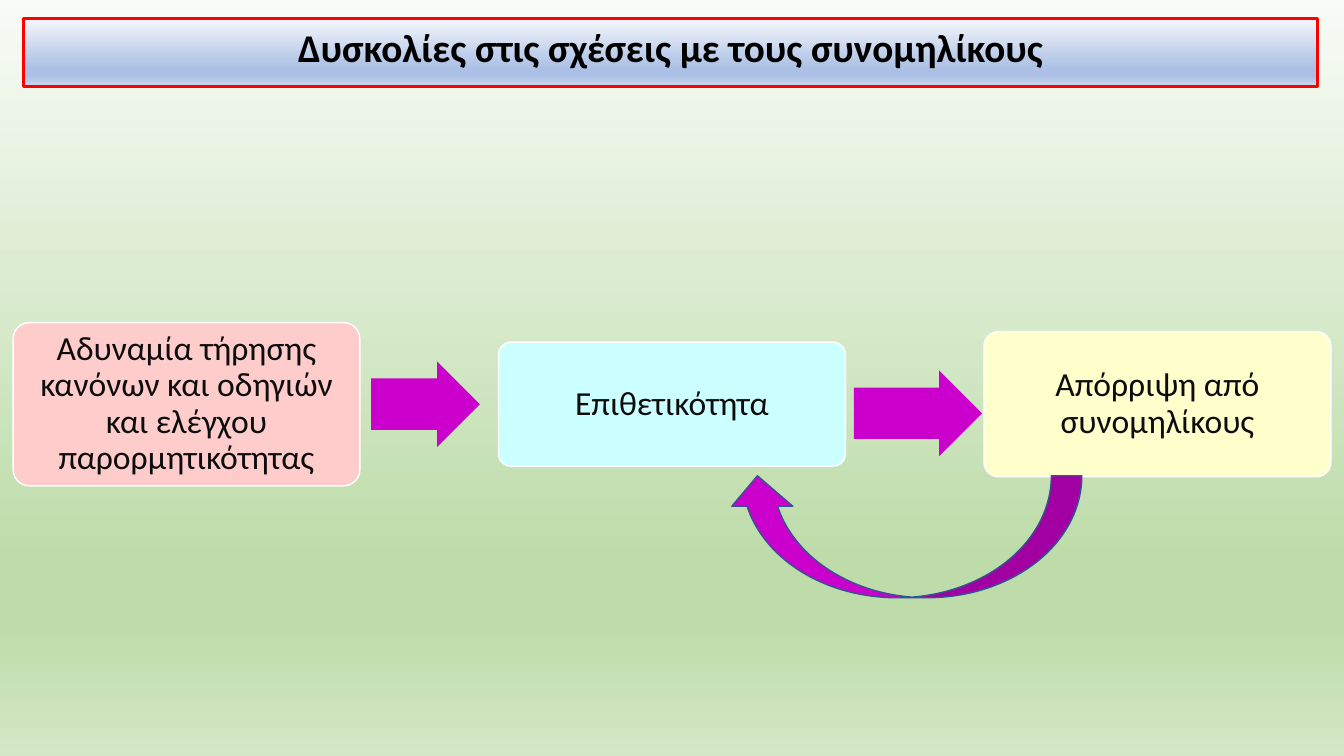
from dataclasses import dataclass

from lxml.etree import SubElement
from pptx import Presentation
from pptx.dml.color import RGBColor
from pptx.enum.shapes import MSO_SHAPE
from pptx.enum.text import MSO_ANCHOR, MSO_AUTO_SIZE, PP_ALIGN
from pptx.oxml.ns import qn
from pptx.util import Inches, Pt


@dataclass(frozen=True)
class Theme:
    """Colours, type sizes and font of the slide."""
    font: str = "Calibri"
    title_size: int = 28
    step_size: int = 24
    title_ink: str = "000000"
    step_ink: str = "0D0D0D"
    title_border: str = "FF0000"
    step_border: str = "FFFFFF"
    arrow: str = "CC00CC"
    return_border: str = "325491"
    backdrop: tuple = ("F8FBF6", "BEDCAA", "BEDCAA", "D4E8C6")
    banner: tuple = ("F6F8FC", "ABC0E4", "ABC0E4", "C7D5ED")
    stops: tuple = (0, 74, 83, 100)


THEME = Theme()
WIDTH, HEIGHT = 13.33, 7.5
STEP_LEFT, STEP_PITCH, STEP_WIDTH = 0.13, 4.815, 3.44
FLOW_AXIS = 4.01
ARROW_HEIGHT = 0.85
STEPS = (
    ("Αδυναμία τήρησης κανόνων και οδηγιών και ελέγχου παρορμητικότητας", 1.62, "FFCCCC"),
    ("Επιθετικότητα", 1.23, "CCFFFF"),
    ("Απόρριψη από συνομηλίκους", 1.44, "FFFFCC"),
)
ARROWS = ((3.68, 1.08, FLOW_AXIS), (8.47, 1.27, FLOW_AXIS + 0.09))


def paint_gradient(fill, owner, colours):
    """Fill downwards with the theme's stops in the given colours."""
    fill.gradient()
    fill.gradient_angle = 270
    stop_list = owner.xpath(".//a:gsLst")[0]
    for stop in list(stop_list):
        stop_list.remove(stop)
    for percent, colour in zip(THEME.stops, colours):
        stop = SubElement(stop_list, qn("a:gs"), pos=str(percent * 1000))
        SubElement(stop, qn("a:srgbClr"), val=colour)


def outline(shape, colour, points):
    """Draw a solid outline."""
    shape.line.color.rgb = RGBColor.from_string(colour)
    shape.line.width = Pt(points)


def write(shape, text, size, ink, anchor, bold=False):
    """Set one centred paragraph and return it."""
    frame = shape.text_frame
    frame.text = text
    frame.word_wrap = True
    frame.auto_size = MSO_AUTO_SIZE.NONE
    frame.vertical_anchor = anchor
    paragraph = frame.paragraphs[0]
    paragraph.alignment = PP_ALIGN.CENTER
    font = paragraph.font
    font.name, font.size, font.bold = THEME.font, Pt(size), bold
    font.color.rgb = RGBColor.from_string(ink)
    return paragraph


def add_block(slide, kind, left, top, width, height, colour):
    """Add a flat filled shape without an outline."""
    block = slide.shapes.add_shape(kind, *map(Inches, (left, top, width, height)))
    block.shadow.inherit = False
    block.fill.solid()
    block.fill.fore_color.rgb = RGBColor.from_string(colour)
    block.line.fill.background()
    return block


def add_banner(slide, text):
    """Turn the title placeholder into the framed banner."""
    banner = slide.shapes.title
    banner.left, banner.top = Inches(0.23), Inches(0.18)
    banner.width, banner.height = Inches(12.84), Inches(0.68)
    paint_gradient(banner.fill, banner.element, THEME.banner)
    outline(banner, THEME.title_border, 2)
    write(banner, text, THEME.title_size, THEME.title_ink, MSO_ANCHOR.TOP, bold=True)


def add_step(slide, column, text, height, colour):
    """Add a rounded step centred on the flow axis."""
    left = STEP_LEFT + column * STEP_PITCH
    step = add_block(slide, MSO_SHAPE.ROUNDED_RECTANGLE, left,
                     FLOW_AXIS - height / 2, STEP_WIDTH, height, colour)
    step.adjustments[0] = 0.1
    outline(step, THEME.step_border, 1)
    paragraph = write(step, text, THEME.step_size, THEME.step_ink, MSO_ANCHOR.MIDDLE)
    paragraph.line_spacing = 0.9
    frame = step.text_frame
    frame.margin_left = frame.margin_right = Inches(0.14)
    frame.margin_top = frame.margin_bottom = Inches(0.14)


def add_arrow(slide, left, width, axis):
    """Add a block arrow between two steps."""
    arrow = add_block(slide, MSO_SHAPE.RIGHT_ARROW, left, axis - ARROW_HEIGHT / 2,
                      width, ARROW_HEIGHT, THEME.arrow)
    arrow.adjustments[0] = 0.6
    arrow.adjustments[1] = 0.5


def add_return_arrow(slide):
    """Add the curved arrow leading back from the last step to the middle one."""
    curve = add_block(slide, MSO_SHAPE.CURVED_UP_ARROW, 7.21, 4.72, 3.52, 1.21, THEME.arrow)
    curve.element.xpath(".//a:xfrm")[0].set("flipH", "1")
    outline(curve, THEME.return_border, 1)


def main():
    """Build and save the slide."""
    deck = Presentation()
    deck.slide_width, deck.slide_height = Inches(WIDTH), Inches(HEIGHT)
    slide = deck.slides.add_slide(deck.slide_layouts.get_by_name("Title Only"))
    paint_gradient(slide.background.fill, slide.element, THEME.backdrop)
    add_banner(slide, "Δυσκολίες στις σχέσεις με τους συνομηλίκους")
    for column, step in enumerate(STEPS):
        add_step(slide, column, *step)
    for arrow in ARROWS:
        add_arrow(slide, *arrow)
    add_return_arrow(slide)
    deck.save("out.pptx")


if __name__ == "__main__":
    main()
